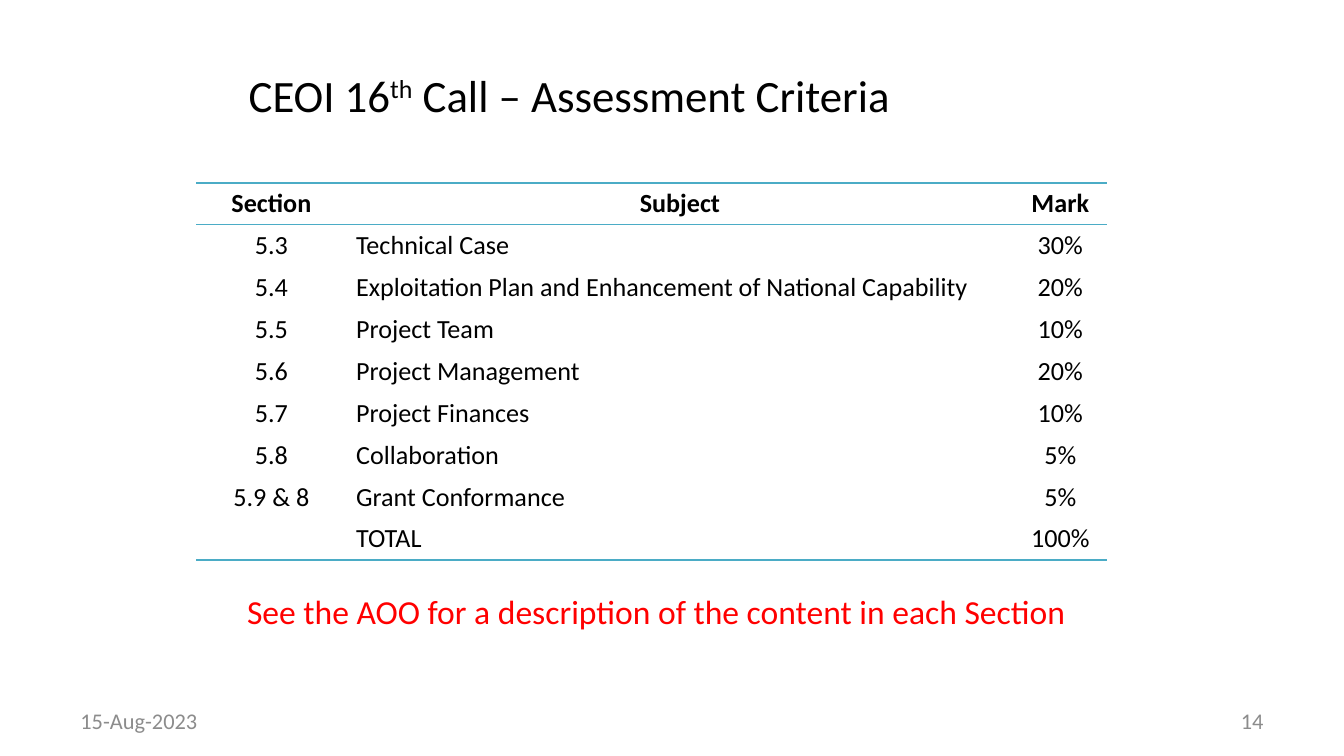
import pptx
import pptx.util
import pptx.dml.color
import pptx.enum.text
import pptx.oxml
import pptx.oxml.ns

Inches, Pt = pptx.util.Inches, pptx.util.Pt
RGBColor = pptx.dml.color.RGBColor
PP_ALIGN, ANCHOR = pptx.enum.text.PP_ALIGN, pptx.enum.text.MSO_ANCHOR
LEFT, CENTER, RIGHT = PP_ALIGN.LEFT, PP_ALIGN.CENTER, PP_ALIGN.RIGHT

# Content
TITLE = [("CEOI 16", False), ("th", True), (" Call – Assessment Criteria", False)]
ROWS = [
    ("Section", "Subject", "Mark"),
    ("5.3", "Technical Case", "30%"),
    ("5.4", "Exploitation Plan and Enhancement of National Capability", "20%"),
    ("5.5", "Project Team", "10%"),
    ("5.6", "Project Management", "20%"),
    ("5.7", "Project Finances", "10%"),
    ("5.8", "Collaboration", "5%"),
    ("5.9 & 8", "Grant Conformance", "5%"),
    ("", "TOTAL", "100%"),
]
NOTE = "See the AOO for a description of the content in each Section"
DATE, NUMBER = "15-Aug-2023", "14"

# Style
FONT = "Calibri"
BLACK = RGBColor(0x00, 0x00, 0x00)
GREY = RGBColor(0x8C, 0x8C, 0x8C)
RED = RGBColor(0xFF, 0x00, 0x00)
TEAL = RGBColor(0x4B, 0xAC, 0xC6)
PLAIN_TABLE = "{2D5ABB26-0587-4C30-8999-92F81FD0307C}"  # no style, no grid
COL_WIDTHS = (1.12, 4.96, 0.7)
COL_ALIGNS = (CENTER, LEFT, CENTER)
ROW_HEIGHT = 0.31


def add_run(p, text, size, color, bold=False):
    r = p.add_run()
    r.text = text
    r.font.name, r.font.size, r.font.bold = FONT, Pt(size), bold
    r.font.color.rgb = color
    return r


def add_text(s, box, text, size, color, align=LEFT, anchor=ANCHOR.TOP, wrap=True):
    tf = s.shapes.add_textbox(*map(Inches, box)).text_frame
    tf.word_wrap, tf.vertical_anchor = wrap, anchor
    p = tf.paragraphs[0]
    p.alignment = align
    add_run(p, text, size, color)


def add_border(cell, side):
    cell._tc.get_or_add_tcPr().append(pptx.oxml.parse_xml(
        f'<a:ln{side} {pptx.oxml.ns.nsdecls("a")} w="12700"><a:solidFill>'
        f'<a:srgbClr val="{TEAL}"/></a:solidFill></a:ln{side}>'))


def fill_cell(cell, text, align, bold):
    cell.margin_left = cell.margin_right = Inches(0.07)
    cell.margin_top = cell.margin_bottom = Pt(2.7)
    cell.vertical_anchor = ANCHOR.MIDDLE
    cell.fill.background()
    p = cell.text_frame.paragraphs[0]
    p.alignment = align
    if text:
        add_run(p, text, 14, BLACK, bold)
    else:  # keeps the empty cell from stretching its row
        p._p.append(pptx.oxml.parse_xml(
            f'<a:endParaRPr {pptx.oxml.ns.nsdecls("a")} sz="1400"/>'))


# Widescreen slide, 16:9
prs = pptx.Presentation()
prs.slide_width = Inches(10)
prs.slide_height = prs.slide_width * 9 // 16
s = prs.slides.add_slide(prs.slide_layouts[5])

# Title
sp = s.shapes.title
sp.left, sp.top, sp.width, sp.height = map(Inches, (0.5, 0.23, 7.47, 0.94))
tf = sp.text_frame
tf.vertical_anchor = ANCHOR.MIDDLE
p = tf.paragraphs[0]
p.alignment = CENTER
for text, raised in TITLE:
    r = add_run(p, text, 24, BLACK)
    if raised:
        r._r.get_or_add_rPr().set("baseline", "30000")

# Criteria table: rules above and below the header and under the total
table = s.shapes.add_table(
    len(ROWS), len(COL_WIDTHS), Inches(1.46), Inches(1.36),
    Inches(sum(COL_WIDTHS)), Inches(ROW_HEIGHT * len(ROWS))).table
table.first_row = table.horz_banding = False
table._tbl.tblPr.find(pptx.oxml.ns.qn("a:tableStyleId")).text = PLAIN_TABLE
for col, width in zip(table.columns, COL_WIDTHS):
    col.width = Inches(width)
for i, row in enumerate(ROWS):
    table.rows[i].height = Inches(ROW_HEIGHT)
    header, total = i == 0, i == len(ROWS) - 1
    for j, text in enumerate(row):
        cell = table.cell(i, j)
        if header:
            add_border(cell, "T")
        if header or total:
            add_border(cell, "B")
        fill_cell(cell, text, CENTER if header else COL_ALIGNS[j], header)

# Note and footer
add_text(s, (1.74, 4.35, 6.37, 0.4), NOTE, 18, RED, wrap=False)
add_text(s, (0.5, 5.21, 2.33, 0.3), DATE, 12, GREY, anchor=ANCHOR.MIDDLE)
add_text(s, (7.17, 5.21, 2.33, 0.3), NUMBER, 12, GREY, RIGHT, ANCHOR.MIDDLE)

prs.save("out.pptx")
